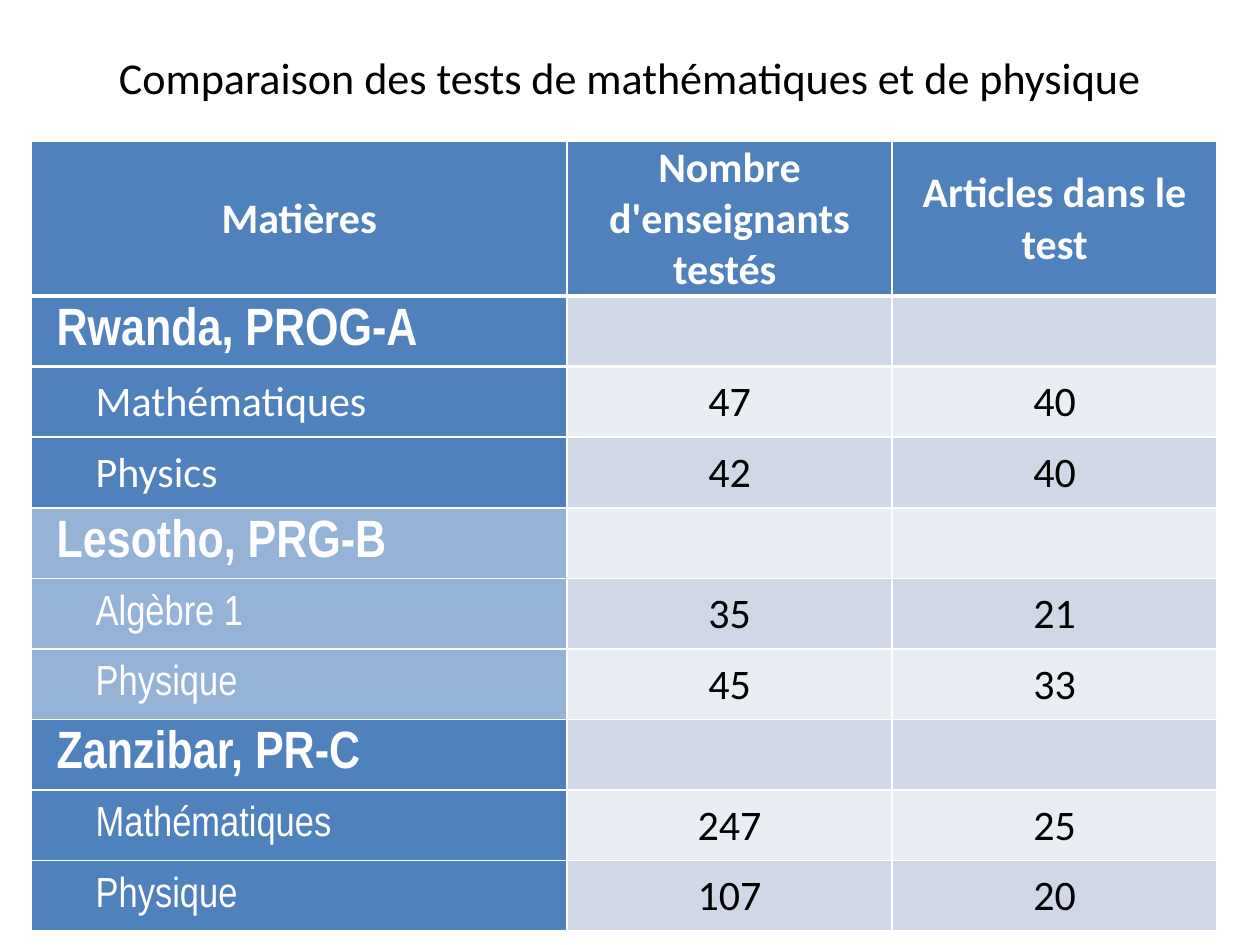
from pptx import Presentation, util as u
from pptx.dml.color import RGBColor
from pptx.enum import text
from pptx.oxml import parse_xml
from pptx.oxml.ns import nsdecls

TITLE = "Comparaison des tests de mathématiques et de physique"
HEADINGS = ["Matières", "Nombre d'enseignants testés ", "Articles dans le test"]
PROGRAMMES = [
    ("Rwanda, PROG-A", "blue", [("Mathématiques", 47, 40, "Calibri"), ("Physics", 42, 40, "Calibri")]),
    ("Lesotho, PRG-B", "light_blue", [("Algèbre 1", 35, 21, "Arial Narrow"), ("Physique", 45, 33, "Arial Narrow")]),
    ("Zanzibar, PR-C", "blue", [("Mathématiques", 247, 25, "Arial Narrow"), ("Physique", 107, 20, "Arial Narrow")]),
]
COLORS = {
    "blue": "4F81BD", "light_blue": "95B3D7", "band_dark": "D0D8E8",
    "band_light": "E9EDF4", "white": "FFFFFF", "black": "000000",
}
COLUMN_WIDTHS = [4.25, 2.58, 2.58]
HEADER_HEIGHT, ROW_HEIGHT = 1.01, 0.56
TABLE_LEFT, TABLE_TOP = 0.25, 1.12
THIN, THICK = 1, 2.25
THICK_RULES = {1, 2}


def write(frame, content, size=24, font="Calibri", color="white", bold=False,
          align=text.PP_ALIGN.CENTER, level=0, indent=0):
    paragraph = frame.paragraphs[0]
    paragraph.alignment = align
    paragraph.level = level
    properties = paragraph._p.get_or_add_pPr()
    properties.set("marL", str(u.Inches(indent)))
    properties.set("indent", "0")
    run = paragraph.add_run()
    run.text = str(content)
    run.font.size = u.Pt(size)
    run.font.name = font
    run.font.bold = bold
    run.font.color.rgb = RGBColor.from_string(COLORS[color])


def style_cell(cell, fill, top, bottom):
    cell.vertical_anchor = text.MSO_ANCHOR.MIDDLE
    cell.margin_left = cell.margin_right = cell.margin_top = u.Inches(0.01)
    cell.margin_bottom = 0
    properties = cell._tc.get_or_add_tcPr()
    for side, width in (("L", THIN), ("R", THIN), ("T", top), ("B", bottom)):
        properties.append(parse_xml(
            f'<a:ln{side} {nsdecls("a")} w="{u.Pt(width)}"><a:solidFill>'
            f'<a:srgbClr val="{COLORS["white"]}"/></a:solidFill></a:ln{side}>'))
    cell.fill.solid()
    cell.fill.fore_color.rgb = RGBColor.from_string(COLORS[fill])


def table_rows():
    heading = dict(bold=True)
    yield "blue", [(label, heading) for label in HEADINGS]
    for programme, fill, subjects in PROGRAMMES:
        yield fill, [(programme, dict(size=30, font="Arial Narrow", bold=True,
                                      align=text.PP_ALIGN.LEFT, indent=0.19))]
        for subject, teachers, items, font in subjects:
            yield fill, [
                (subject, dict(font=font, align=text.PP_ALIGN.LEFT, level=1, indent=0.5)),
                (teachers, dict(color="black")),
                (items, dict(color="black")),
            ]


def add_title(slide):
    title = slide.shapes.title
    title.left, title.top = 0, u.Inches(-0.17)
    title.width, title.height = u.Inches(10), u.Inches(0.92)
    frame = title.text_frame
    frame.auto_size = text.MSO_AUTO_SIZE.NONE
    frame.vertical_anchor = text.MSO_ANCHOR.TOP
    frame.margin_top, frame.margin_bottom = u.Inches(0.57), 0
    write(frame, TITLE, size=25.2, color="black")


def add_comparison(slide):
    rows = list(table_rows())
    heights = [HEADER_HEIGHT] + [ROW_HEIGHT] * (len(rows) - 1)
    table = slide.shapes.add_table(
        len(rows), len(COLUMN_WIDTHS), u.Inches(TABLE_LEFT), u.Inches(TABLE_TOP),
        u.Inches(sum(COLUMN_WIDTHS)), u.Inches(sum(heights))).table
    for column, width in zip(table.columns, COLUMN_WIDTHS):
        column.width = u.Inches(width)
    for r, (fill, entries) in enumerate(rows):
        table.rows[r].height = u.Inches(heights[r])
        band = "blue" if r == 0 else "band_dark" if r % 2 else "band_light"
        top, bottom = (THICK if rule in THICK_RULES else THIN for rule in (r, r + 1))
        for c in range(len(COLUMN_WIDTHS)):
            style_cell(table.cell(r, c), fill if c == 0 else band, top, bottom)
        for c, (content, style) in enumerate(entries):
            write(table.cell(r, c).text_frame, content, **style)


def main():
    deck = Presentation()
    deck.slide_width, deck.slide_height = u.Inches(10), u.Inches(7.5)
    slide = deck.slides.add_slide(deck.slide_layouts.get_by_name("Title Only"))
    add_title(slide)
    add_comparison(slide)
    deck.save("out.pptx")


if __name__ == "__main__":
    main()
